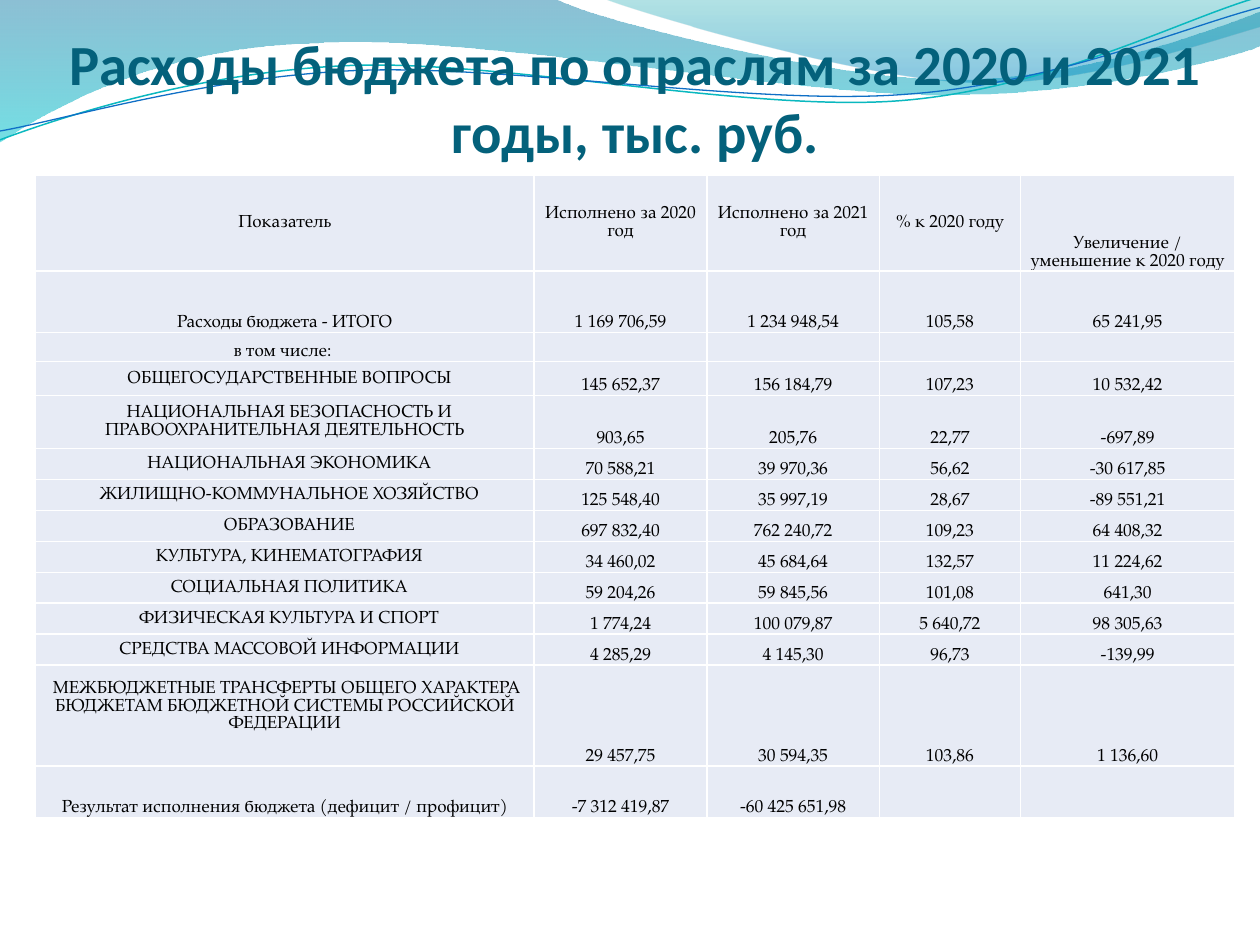
from dataclasses import dataclass
from math import cos, radians, sin
from typing import Optional

from pptx import Presentation
from pptx.dml.color import RGBColor
from pptx.enum.text import MSO_ANCHOR as ANCHOR, PP_ALIGN as ALIGN
from pptx.oxml.ns import qn
from pptx.oxml.xmlchemy import OxmlElement as Element
from pptx.util import Inches, Pt

TITLE_COLOR = RGBColor(0x04, 0x61, 0x7B)
CELL_FILL = RGBColor(0xE7, 0xEB, 0xF5)
BLACK = RGBColor(0, 0, 0)
WHITE = RGBColor(0xFF, 0xFF, 0xFF)
DEEP_BLUE = RGBColor(0x00, 0x74, 0xA1)
AQUA = RGBColor(0x00, 0xC6, 0xCF)
TEAL = RGBColor(0x00, 0xA1, 0xA9)
SKY = RGBColor(0x00, 0x8B, 0xBF)
LINE_TEAL = RGBColor(0x0A, 0xB8, 0xBF)
LINE_BLUE = RGBColor(0x0F, 0x6F, 0xC6)

TILT = -2.7
TITLE = "Расходы бюджета по отраслям за 2020 и 2021 годы, тыс. руб."
TITLE_FONT = {"name": "Calibri", "size": Pt(32.4), "bold": True}
CELL_FONT = {"name": "TeX Gyre Pagella", "size": Pt(10)}
COL_WIDTHS = (3.96, 1.37, 1.37, 1.12, 1.7)
SECTOR_HEIGHT = 1.72 / 7


@dataclass
class Stop:
    color: RGBColor
    position: float
    opacity: int


@dataclass
class Wave:
    start: tuple
    segments: list
    stops: tuple = ()
    line: Optional[RGBColor] = None
    width: float = 0
    center: tuple = (0, 0)


@dataclass
class Row:
    height: float
    texts: tuple
    anchor: ANCHOR = ANCHOR.BOTTOM
    number_anchor: ANCHOR = ANCHOR.BOTTOM
    indent: float = 0
    bottom: float = 0


WAVES = [
    Wave((0, 0), [(4.4, -0.01), (4.76, 0.17, 6.64, 0.63, 7.58, 0.63),
                  (8.53, 0.63, 9.58, 0.26, 10, 0.09), (10.01, 0.36),
                  (9.83, 0.44, 8.7, 0.76, 7.46, 0.75),
                  (6.22, 0.75, 3.82, 0.28, 2.57, 0.34),
                  (1.29, 0.36, 0.46, 0.83, -0.01, 1.13), (0, 0)],
         (Stop(DEEP_BLUE, 0, 45), Stop(AQUA, 1, 55))),
    Wave((4.79, -0.01), [(5.09, 0.11, 6.82, 0.62, 7.69, 0.65),
                         (8.56, 0.69, 9.61, 0.32, 10, 0.21), (10, 0), (4.79, -0.01)],
         (Stop(TEAL, 0, 30), Stop(SKY, 0.8, 45))),
    Wave((0, 1.11), [(0.48, 0.93, 1.58, 0.57, 2.77, 0.52),
                     (3.95, 0.47, 5.93, 0.89, 7.13, 0.8),
                     (8.33, 0.71, 9.38, 0.15, 9.98, -0.02)],
         line=LINE_TEAL, width=0.85, center=(4.99, 0.58)),
    Wave((0, 1.04), [(0.47, 0.96, 1.64, 0.61, 2.83, 0.56),
                     (4.03, 0.51, 5.97, 0.84, 7.17, 0.75),
                     (8.36, 0.67, 9.41, 0.21, 10, 0.06)],
         line=LINE_BLUE, width=0.75, center=(5, 0.59)),
]


def sector(*texts: str, height: float = SECTOR_HEIGHT, indent: float = 0.07,
           bottom: float = 0) -> Row:
    return Row(height, texts, ANCHOR.MIDDLE, indent=indent, bottom=bottom)


ROWS = [
    Row(0.76, ("Показатель", "Исполнено за 2020 год", "Исполнено за 2021 год",
               "% к 2020 году", "Увеличение / уменьшение к 2020 году"),
        ANCHOR.MIDDLE, ANCHOR.MIDDLE),
    Row(0.49, ("Расходы бюджета - ИТОГО", "1 169 706,59", "1 234 948,54", "105,58", "65 241,95")),
    Row(0.23, ("в том числе: ", "", "", "", "")),
    sector("ОБЩЕГОСУДАРСТВЕННЫЕ ВОПРОСЫ",
           "145 652,37", "156 184,79", "107,23", "10 532,42", height=0.27),
    sector("НАЦИОНАЛЬНАЯ БЕЗОПАСНОСТЬ И ПРАВООХРАНИТЕЛЬНАЯ ДЕЯТЕЛЬНОСТЬ",
           "903,65", "205,76", "22,77", "-697,89", height=0.42),
    sector("НАЦИОНАЛЬНАЯ ЭКОНОМИКА", "70 588,21", "39 970,36", "56,62", "-30 617,85"),
    sector("ЖИЛИЩНО-КОММУНАЛЬНОЕ ХОЗЯЙСТВО", "125 548,40", "35 997,19", "28,67", "-89 551,21"),
    sector("ОБРАЗОВАНИЕ", "697 832,40", "762 240,72", "109,23", "64 408,32"),
    sector("КУЛЬТУРА, КИНЕМАТОГРАФИЯ", "34 460,02", "45 684,64", "132,57", "11 224,62"),
    sector("СОЦИАЛЬНАЯ ПОЛИТИКА", "59 204,26", "59 845,56", "101,08", "641,30"),
    sector("ФИЗИЧЕСКАЯ КУЛЬТУРА И СПОРТ", "1 774,24", "100 079,87", "5 640,72", "98 305,63"),
    sector("СРЕДСТВА МАССОВОЙ ИНФОРМАЦИИ", "4 285,29", "4 145,30", "96,73", "-139,99"),
    sector("МЕЖБЮДЖЕТНЫЕ ТРАНСФЕРТЫ ОБЩЕГО ХАРАКТЕРА БЮДЖЕТАМ БЮДЖЕТНОЙ СИСТЕМЫ "
           "РОССИЙСКОЙ ФЕДЕРАЦИИ", "29 457,75", "30 594,35", "103,86", "1 136,60",
           height=0.8, indent=0.03, bottom=0.14),
    Row(0.41, ("Результат исполнения бюджета (дефицит / профицит)",
               "-7 312 419,87", "-60 425 651,98", "", "")),
]


def apply(target, values: dict) -> None:
    for name, value in values.items():
        setattr(target, name, value)


def turn(point: tuple, center: tuple, degrees: float) -> tuple:
    a = radians(degrees)
    dx, dy = point[0] - center[0], point[1] - center[1]
    return center[0] + dx * cos(a) - dy * sin(a), center[1] + dx * sin(a) + dy * cos(a)


def bend(sp, segments: list) -> None:
    steps = iter(list(sp.element.iter(qn("a:lnTo"))))
    for seg in segments:
        first = next(steps)
        if len(seg) == 2:
            continue
        curve = Element("a:cubicBezTo")
        first.addprevious(curve)
        for step in (first, next(steps), next(steps)):
            curve.append(step[0])
            step.getparent().remove(step)


def draw_wave(s, wave: Wave) -> None:
    points = [wave.start] + [seg[k:k + 2] for seg in wave.segments for k in range(0, len(seg), 2)]
    if wave.line:
        points = [turn(pt, wave.center, -TILT) for pt in points]
    points = [(Inches(x), Inches(y)) for x, y in points]
    builder = s.shapes.build_freeform(*points[0], scale=1.0)
    builder.add_line_segments(points[1:], close=not wave.line)
    sp = builder.convert_to_shape()
    bend(sp, wave.segments)
    sp.shadow.inherit = False
    if wave.line:
        sp.fill.background()
        sp.line.color.rgb = wave.line
        sp.line.width = Pt(wave.width)
        sp.rotation = TILT
        return
    sp.line.fill.background()
    sp.fill.gradient()
    sp.fill.gradient_angle = 270
    for stop, tint in zip(sp.fill.gradient_stops, wave.stops):
        stop.color.rgb = tint.color
        stop.position = tint.position
    for color, tint in zip(sp.element.iter(qn("a:srgbClr")), wave.stops):
        alpha = Element("a:alpha")
        alpha.set("val", str(tint.opacity * 1000))
        color.append(alpha)


def write(p, text: str, font: dict, color: RGBColor) -> None:
    p.alignment = ALIGN.CENTER
    if not text:
        end = Element("a:endParaRPr")
        end.set("sz", str(int(font["size"].pt * 100)))
        p._p.append(end)
        return
    r = p.add_run()
    r.text = text
    apply(r.font, font)
    r.font.color.rgb = color


def add_title(s) -> None:
    tf = s.shapes.add_textbox(Inches(0.5), Inches(0.44), Inches(9.08), Inches(0.87)).text_frame
    apply(tf, {"word_wrap": True, "vertical_anchor": ANCHOR.BOTTOM, "margin_left": 0,
               "margin_top": Inches(0.05), "margin_right": 0, "margin_bottom": 0})
    write(tf.paragraphs[0], TITLE, TITLE_FONT, TITLE_COLOR)


def add_borders(cell) -> None:
    tc_pr = cell._tc.get_or_add_tcPr()
    for i, side in enumerate(("lnL", "lnR", "lnT", "lnB")):
        ln, fill, color = (Element(f"a:{tag}") for tag in (side, "solidFill", "srgbClr"))
        ln.set("w", str(Pt(1)))
        color.set("val", str(WHITE))
        fill.append(color)
        ln.append(fill)
        tc_pr.insert(i, ln)


def add_budget_table(s) -> None:
    frame = s.shapes.add_table(len(ROWS), len(COL_WIDTHS), Inches(0.28), Inches(1.39),
                               Inches(sum(COL_WIDTHS)), Inches(sum(r.height for r in ROWS)))
    table = frame.table
    apply(table, {"first_row": False, "horz_banding": False})
    for col, width in zip(table.columns, COL_WIDTHS):
        col.width = Inches(width)
    for i, row in enumerate(ROWS):
        table.rows[i].height = Inches(row.height)
        for j, text in enumerate(row.texts):
            cell = table.cell(i, j)
            anchor = row.number_anchor if 0 < j < 4 else ANCHOR.BOTTOM
            apply(cell, {"vertical_anchor": anchor if j else row.anchor,
                         "margin_left": Inches(0.01), "margin_top": Inches(0.01),
                         "margin_right": Inches(0.01),
                         "margin_bottom": Inches(0 if j else row.bottom)})
            cell.fill.solid()
            cell.fill.fore_color.rgb = CELL_FILL
            add_borders(cell)
            p = cell.text_frame.paragraphs[0]
            p.line_spacing = Pt(10)
            if row.indent and not j:
                p._p.get_or_add_pPr().set("indent", str(Inches(row.indent)))
            write(p, text, CELL_FONT, BLACK)


def main() -> None:
    """Build the budget spending slide."""
    prs = Presentation()
    apply(prs, {"slide_width": Inches(10), "slide_height": Inches(7.5)})
    s = prs.slides.add_slide(prs.slide_layouts[6])
    for wave in WAVES:
        draw_wave(s, wave)
    add_title(s)
    add_budget_table(s)
    prs.save("out.pptx")


if __name__ == "__main__":
    main()
